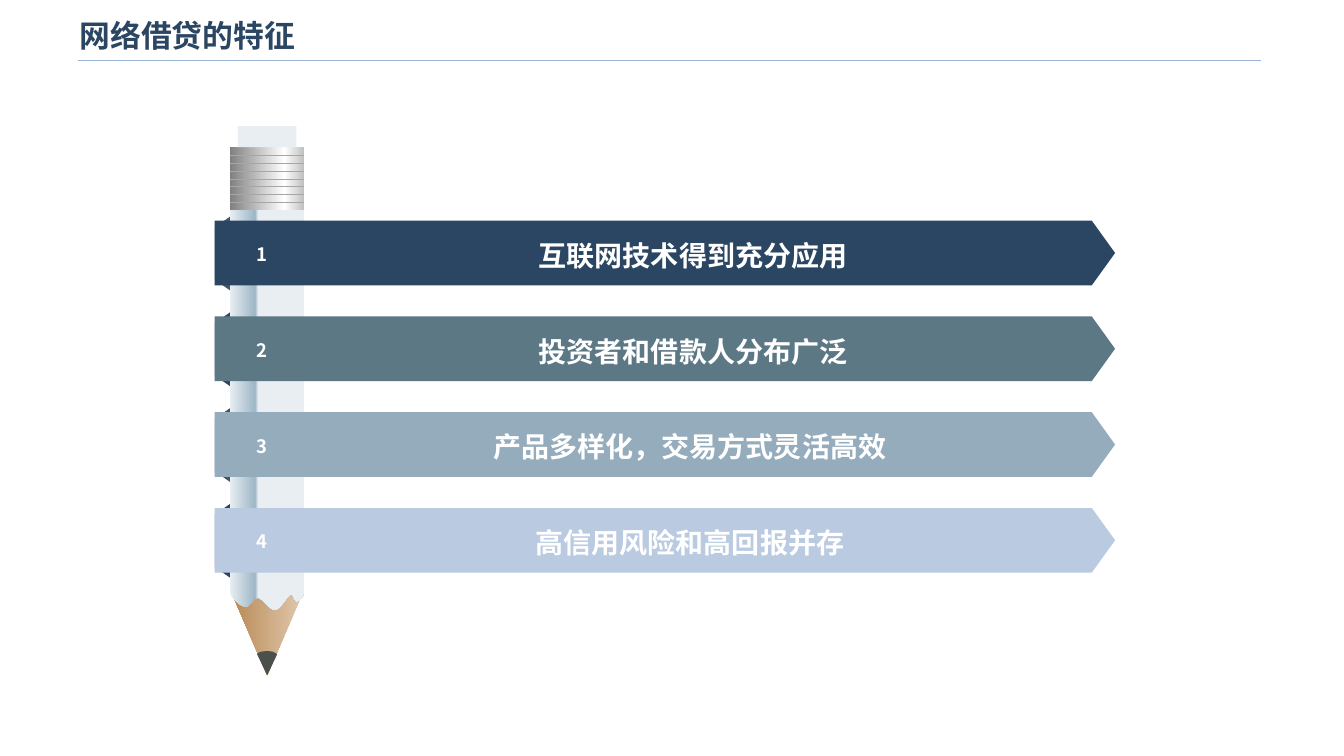
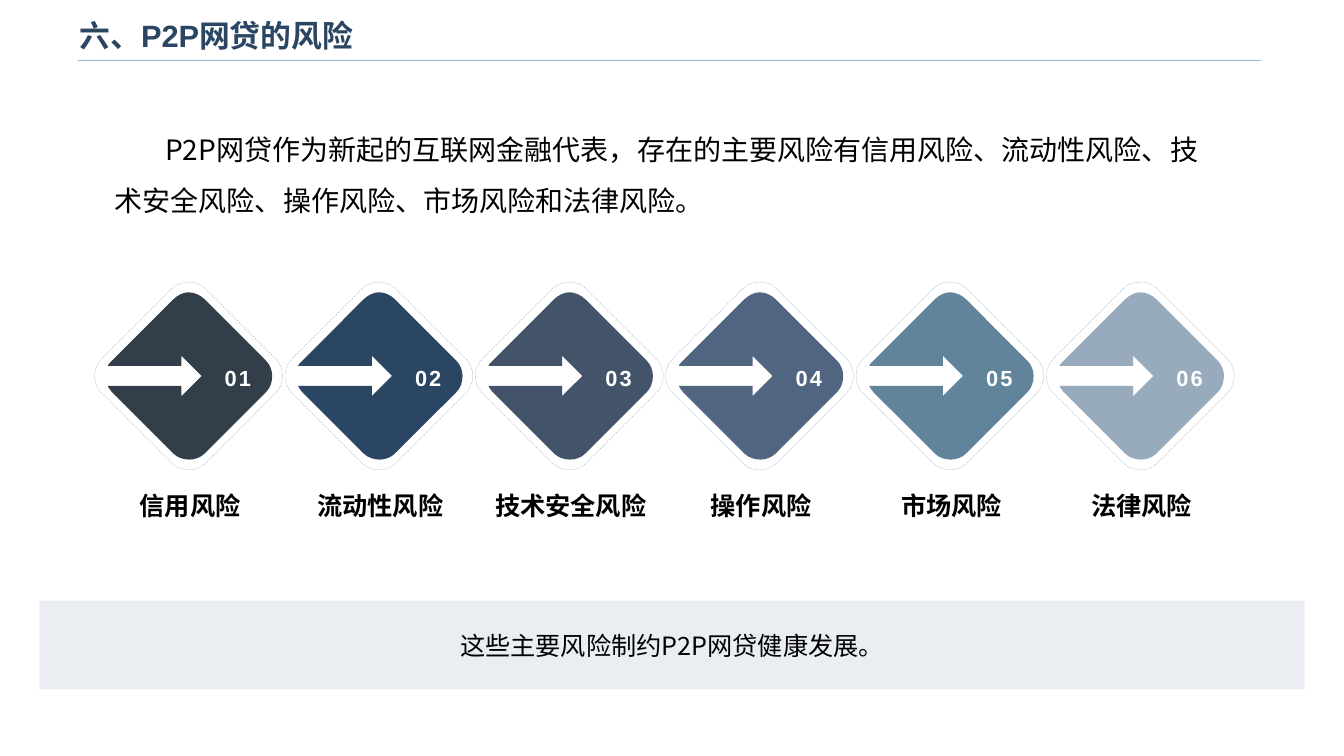
from copy import deepcopy

from lxml import etree
from pptx import Presentation
from pptx.dml.color import RGBColor
from pptx.enum.dml import MSO_FILL, MSO_LINE
from pptx.enum.shapes import MSO_CONNECTOR, MSO_SHAPE, MSO_SHAPE_TYPE
from pptx.enum.text import MSO_ANCHOR, PP_ALIGN
from pptx.oxml.ns import qn
from pptx.util import Inches, Pt

LEFT, CENTER = PP_ALIGN.LEFT, PP_ALIGN.CENTER
TOP, MIDDLE = MSO_ANCHOR.TOP, MSO_ANCHOR.MIDDLE
STRAIGHT = MSO_CONNECTOR.STRAIGHT
RECTANGLE = MSO_SHAPE.RECTANGLE
ROUNDED = MSO_SHAPE.ROUNDED_RECTANGLE
PENTAGON = MSO_SHAPE.PENTAGON
TRAPEZOID = MSO_SHAPE.TRAPEZOID
DRAWN_TYPES = (MSO_SHAPE_TYPE.AUTO_SHAPE, MSO_SHAPE_TYPE.FREEFORM)

CJK_FONT = "Noto Sans CJK SC"
LATIN_FONT = "Arial"
NAVY, WHITE, BLACK = "2B4663", "FFFFFF", "000000"
RULE, PALE, RING = "98B4D2", "E8EEF2", "97ABBD"

color = RGBColor.from_string


def write(box, text, size, hue, bold=False, font=CJK_FONT, align=CENTER, anchor=TOP, spacing=None):
    frame = box.text_frame
    frame.word_wrap = True
    frame.vertical_anchor = anchor
    paragraph = frame.paragraphs[0]
    paragraph.text = text
    paragraph.alignment = align
    paragraph.line_spacing = spacing
    paragraph.font.size = Pt(size)
    paragraph.font.bold = bold
    paragraph.font.color.rgb = color(hue)
    paragraph.font.name = font
    defaults = paragraph._p.pPr.find(qn("a:defRPr"))
    etree.SubElement(defaults, qn("a:ea")).set("typeface", CJK_FONT)
    return paragraph


def outline(page, start, steps, shift=0):
    ends = [(Inches(x + shift), Inches(y)) for x, y in [start] + [step[-2:] for step in steps]]
    builder = page.shapes.build_freeform(*ends[0])
    builder.add_line_segments(ends[1:], close=True)
    shape = builder.convert_to_shape()
    segments = list(shape._element.iter(qn("a:lnTo")))
    for segment, step in zip(segments, steps):
        if len(step) == 6:
            curve = etree.Element(qn("a:cubicBezTo"))
            for x, y in zip(step[::2], step[1::2]):
                point = etree.SubElement(curve, qn("a:pt"))
                point.set("x", str(Inches(x + shift) - shape.left))
                point.set("y", str(Inches(y) - shape.top))
            segment.getparent().replace(segment, curve)
    return shape


deck = Presentation()
deck.slide_width, deck.slide_height = Inches(13.33), Inches(7.5)
layout = deck.slide_layouts[5]
pages = []
for heading in ("网络借贷的特征", "六、P2P网贷的风险"):
    page = deck.slides.add_slide(layout)
    title = page.shapes.title
    title.left, title.top = Inches(0.69), Inches(0.08)
    title.width, title.height = Inches(10.71), Inches(0.53)
    write(title, heading, 22, NAVY, True, LATIN_FONT, LEFT, MIDDLE)
    pages.append(page)
features, risks = pages

rule = features.shapes.add_connector(STRAIGHT, Inches(0.77), Inches(0.6), Inches(12.51), Inches(0.6))
rule.line.color.rgb = color(RULE)
rule.line.width = Pt(1)
etree.SubElement(rule._element.spPr, qn("a:effectLst"))
layout.shapes._spTree.append(rule._element)

wood = features.shapes.add_shape(PENTAGON, Inches(2.22), Inches(5.9), Inches(0.86), Inches(0.74))
wood.adjustments[0] = 2.82
wood.rotation = 90
barrel = outline(features, (2.28, 2.08), [
    (3.02, 2.08), (3.02, 5.85),
    (3.01, 5.93, 2.98, 5.96, 2.94, 5.97),
    (2.9, 5.94, 2.92, 5.89, 2.88, 5.9),
    (2.85, 5.91, 2.78, 6.05, 2.73, 6.05),
    (2.68, 6.06, 2.61, 5.94, 2.56, 5.93),
    (2.51, 5.93, 2.48, 6.03, 2.43, 6.02),
    (2.36, 6, 2.3, 5.93, 2.28, 5.88),
])
ferrule = features.shapes.add_shape(RECTANGLE, Inches(2.28), Inches(1.46), Inches(0.74), Inches(0.62))
eraser = features.shapes.add_shape(RECTANGLE, Inches(2.36), Inches(1.25), Inches(0.58), Inches(0.21))
lead = outline(features, (2.65, 6.46), [
    (2.7, 6.46, 2.73, 6.47, 2.75, 6.49), (2.65, 6.7), (2.55, 6.49),
    (2.56, 6.47, 2.6, 6.46, 2.65, 6.46),
])
for part, hue in ((eraser, PALE), (lead, "4C504C")):
    part.fill.solid()
    part.fill.fore_color.rgb = color(hue)

for part, angle, stops in (
    (wood, 270, ((0, "E1C9AF"), (100, "B88954"))),
    (barrel, 0, ((0, PALE), (34, "9CB6C7"), (38, PALE), (100, PALE))),
    (ferrule, 180, ((0, "BFBFBF"), (27, WHITE), (100, "808080"))),
):
    part.fill.gradient()
    part.fill.gradient_angle = angle
    stop_list = part._element.spPr.find(qn("a:gradFill")).find(qn("a:gsLst"))
    while len(stop_list) < len(stops):
        stop_list.append(deepcopy(stop_list[0]))
    for stop, (percent, hue) in zip(part.fill.gradient_stops, stops):
        stop.position = percent / 100
        stop.color.rgb = color(hue)

for index in range(7):
    y = Inches(1.54 + index * 0.47 / 6)
    groove = features.shapes.add_connector(STRAIGHT, Inches(2.28), y, Inches(3.02), y)
    groove.line.color.rgb = color("A6A6A6")
    groove.line.width = Pt(0.5)

feature_rows = (
    ("互联网技术得到充分应用", NAVY, "415867"),
    ("投资者和借款人分布广泛", "5C7885", NAVY),
    ("产品多样化，交易方式灵活高效 ", "94ACBC", "425668"),
    ("高信用风险和高回报并存 ", "B9CAE1", NAVY),
)
for index, (text, bar_hue, fold_hue) in enumerate(feature_rows):
    drop = index * 2.85 / 3
    fold = features.shapes.add_shape(TRAPEZOID, Inches(1.84), Inches(2.44 + drop), Inches(0.73), Inches(0.15))
    fold.adjustments[0] = 0.7
    fold.rotation = 270
    bar = features.shapes.add_shape(PENTAGON, Inches(2.13), Inches(2.19 + drop), Inches(8.93), Inches(0.64))
    bar.adjustments[0] = 0.36
    for part, hue in ((fold, fold_hue), (bar, bar_hue)):
        part.fill.solid()
        part.fill.fore_color.rgb = color(hue)
    caption = features.shapes.add_textbox(Inches(3.91), Inches(2.25 + drop), Inches(5.93), Inches(0.5))
    write(caption, text, 20, WHITE, True, spacing=1.2)
    number = features.shapes.add_textbox(Inches(2.18), Inches(2.32 + drop), Inches(0.83), Inches(0.37))
    write(number, str(index + 1), 13.2, WHITE, True, spacing=1.2)

intro = risks.shapes.add_textbox(Inches(1.04), Inches(1.1), Inches(11.17), Inches(1.11))
paragraph = write(
    intro,
    "P2P网贷作为新起的互联网金融代表，存在的主要风险有信用风险、流动性风险、技术安全风险、操作风险、市场风险和法律风险。",
    20, BLACK, align=LEFT, spacing=1.5,
)
paragraph.space_after = Pt(10)
paragraph._p.pPr.set("marL", "0")
paragraph._p.pPr.set("indent", str(Inches(0.5)))

diamond_steps = [
    (1.93, 2.9, 1.99, 2.93, 2.03, 2.97), (2.64, 3.58),
    (2.68, 3.62, 2.7, 3.68, 2.7, 3.73), (2.7, 3.79, 2.68, 3.85, 2.64, 3.89),
    (2.03, 4.5),
    (1.99, 4.54, 1.93, 4.56, 1.88, 4.56), (1.82, 4.56, 1.76, 4.54, 1.72, 4.5),
    (1.11, 3.89),
    (1.1, 3.88, 1.09, 3.86, 1.08, 3.85), (1.07, 3.83),
    (1.8, 3.83), (1.8, 3.93), (2, 3.73), (1.8, 3.53), (1.8, 3.63), (1.07, 3.63),
    (1.08, 3.61), (1.09, 3.6, 1.1, 3.59, 1.11, 3.58), (1.72, 2.97),
    (1.76, 2.93, 1.82, 2.9, 1.87, 2.9),
]
risk_items = (
    ("信用风险", "323F4B"), ("流动性风险", NAVY), ("技术安全风险", "43536A"),
    ("操作风险", "526580"), ("市场风险", "61849B"), ("法律风险", RING),
)
for index, (name, hue) in enumerate(risk_items):
    shift = index * 9.44 / 5
    ring = risks.shapes.add_shape(ROUNDED, Inches(1.14 + shift), Inches(3), Inches(1.46), Inches(1.46))
    ring.rotation = 45
    ring.fill.background()
    ring.line.color.rgb = color(RING)
    ring.line.width = Pt(0.25)
    ring.line.dash_style = MSO_LINE.DASH
    diamond = outline(risks, (1.87, 2.9), diamond_steps, shift)
    diamond.fill.solid()
    diamond.fill.fore_color.rgb = color(hue)
    number = risks.shapes.add_textbox(Inches(2.13 + shift), Inches(3.52), Inches(0.5), Inches(0.44))
    paragraph = write(number, f"{index + 1:02}", 15.6, WHITE, True, LATIN_FONT, LEFT, spacing=1.2)
    paragraph._p.pPr.find(qn("a:defRPr")).set("spc", "150")
    label = risks.shapes.add_textbox(Inches(0.97 + shift), Inches(4.72), Inches(1.83), Inches(0.47))
    label.text_frame.margin_bottom = 0
    write(label, name, 18, BLACK, True, anchor=MIDDLE, spacing=1.2)

band = risks.shapes.add_shape(RECTANGLE, Inches(0.39), Inches(5.96), Inches(12.55), Inches(0.88))
band.fill.solid()
band.fill.fore_color.rgb = color("EAEEF2")
write(band, "这些主要风险制约P2P网贷健康发展。", 18, BLACK, anchor=MIDDLE)

for page in pages:
    for shape in page.shapes:
        if shape.shape_type == MSO_SHAPE_TYPE.LINE:
            etree.SubElement(shape._element.spPr, qn("a:effectLst"))
        elif shape.shape_type in DRAWN_TYPES:
            shape.shadow.inherit = False
            if shape.fill.type != MSO_FILL.BACKGROUND:
                shape.line.fill.background()

deck.save("out.pptx")
